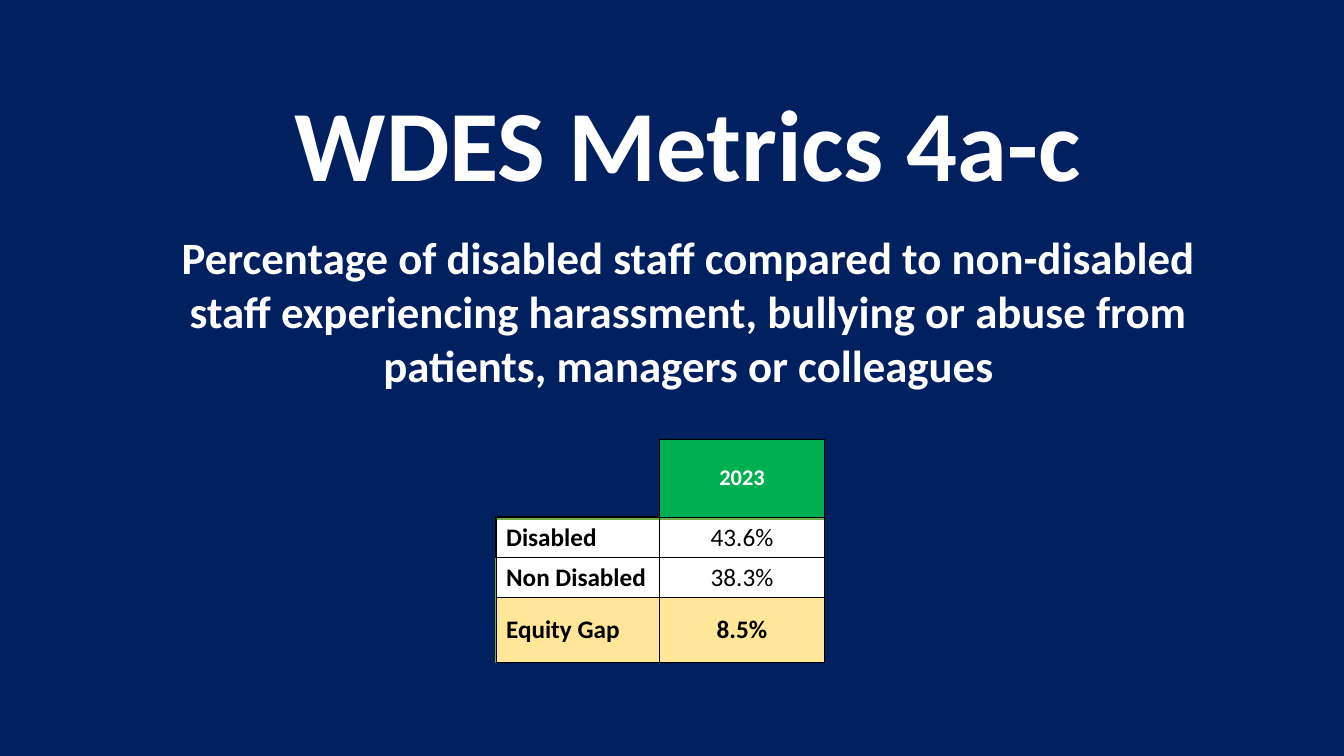
"""Build the WDES Metrics 4a-c slide with its equity gap table."""
from lxml import etree
from pptx import Presentation
from pptx import util as u
from pptx.dml.color import RGBColor
from pptx.enum import shapes, text
from pptx.oxml import ns

NAVY = RGBColor(0x00, 0x20, 0x60)
WHITE = RGBColor(0xFF, 0xFF, 0xFF)
BLACK = RGBColor(0x00, 0x00, 0x00)
GREEN = RGBColor(0x00, 0xB0, 0x50)
LEAF = RGBColor(0x70, 0xAD, 0x47)
YELLOW = RGBColor(0xFF, 0xE6, 0x99)
CENTER, LEFT = text.PP_ALIGN.CENTER, text.PP_ALIGN.LEFT


def write(para, words, size, color, bold=True, align=CENTER):
    """Add one formatted run to a paragraph."""
    para.alignment = align
    span = para.add_run()
    span.text = words
    span.font.name = "Calibri"
    span.font.size = u.Pt(size)
    span.font.bold = bold
    span.font.color.rgb = color


def set_borders(cell, widths):
    """Draw black cell borders from widths in points, with zero for none."""
    properties = cell._tc.get_or_add_tcPr()
    for position, (side, width) in enumerate(zip(("lnL", "lnR", "lnT", "lnB"), widths)):
        line = etree.Element(ns.qn(f"a:{side}"), w=str(u.Pt(width)))
        if width:
            fill = etree.SubElement(line, ns.qn("a:solidFill"))
            etree.SubElement(fill, ns.qn("a:srgbClr"), val=str(BLACK))
        else:
            etree.SubElement(line, ns.qn("a:noFill"))
        properties.insert(position, line)


deck = Presentation()
deck.slide_width, deck.slide_height = u.Inches(13.33), u.Inches(7.5)
page = deck.slides.add_slide(deck.slide_layouts[0])
page.background.fill.solid()
page.background.fill.fore_color.rgb = NAVY

title, subtitle = page.placeholders
title.left, title.top = u.Inches(1.76), u.Inches(0.35)
title.width, title.height = u.Inches(10.13), u.Inches(1.72)
title.text_frame.vertical_anchor = text.MSO_ANCHOR.BOTTOM
heading = title.text_frame.paragraphs[0]
heading.line_spacing = 0.9
write(heading, "WDES Metrics 4a-c", 72, WHITE)

subtitle.left, subtitle.top = u.Inches(1.39), u.Inches(2.23)
subtitle.width, subtitle.height = u.Inches(10.88), u.Inches(1.72)
subtitle.text_frame.auto_size = text.MSO_AUTO_SIZE.SHAPE_TO_FIT_TEXT
description = subtitle.text_frame.paragraphs[0]
description.space_before = u.Pt(0)
write(description, "Percentage of disabled staff compared to non-disabled staff "
      "experiencing harassment, bullying or abuse from patients, managers or colleagues",
      32, WHITE)

panel = page.shapes.add_shape(shapes.MSO_SHAPE.RECTANGLE, u.Inches(4.92), u.Inches(5.15),
                              u.Inches(3.26), u.Inches(1.42))
panel.shadow.inherit = False
panel.fill.solid()
panel.fill.fore_color.rgb = WHITE
panel.line.color.rgb = LEAF
panel.line.width = u.Pt(1)

rows = [
    (0.77, "", "2023", None),
    (0.4, "Disabled", "43.6%", None),
    (0.4, "Non Disabled", "38.3%", None),
    (0.64, "Equity Gap", "8.5%", YELLOW),
]
table = page.shapes.add_table(len(rows), 2, u.Inches(4.92), u.Inches(4.36),
                              u.Inches(3.26), u.Inches(2.21)).table
table.first_row = table.horz_banding = False
for column, width in zip(table.columns, (1.62, 1.64)):
    column.width = u.Inches(width)

for index, (height, label, value, color) in enumerate(rows):
    table.rows[index].height = u.Inches(height)
    for column, words in enumerate((label, value)):
        cell = table.cell(index, column)
        cell.vertical_anchor = text.MSO_ANCHOR.MIDDLE
        header = index == 0
        fill = GREEN if header and words else color
        if fill:
            cell.fill.solid()
            cell.fill.fore_color.rgb = fill
        else:
            cell.fill.background()
        if words:
            write(cell.text_frame.paragraphs[0], words, 16 if header else 18,
                  WHITE if header else BLACK,
                  bold=header or column == 0 or label == "Equity Gap",
                  align=CENTER if column else LEFT)
        if header and not words:
            set_borders(cell, (0, 1, 0, 1))
        elif label == "Disabled" and column == 0:
            set_borders(cell, (1, 1, 1, 1))
        else:
            left = 1 if column and index < 2 else 0.75
            top = 1 if label == "Non Disabled" and column == 0 else 0.75
            set_borders(cell, (left, 0.75, top, 0.75))

deck.save("out.pptx")
